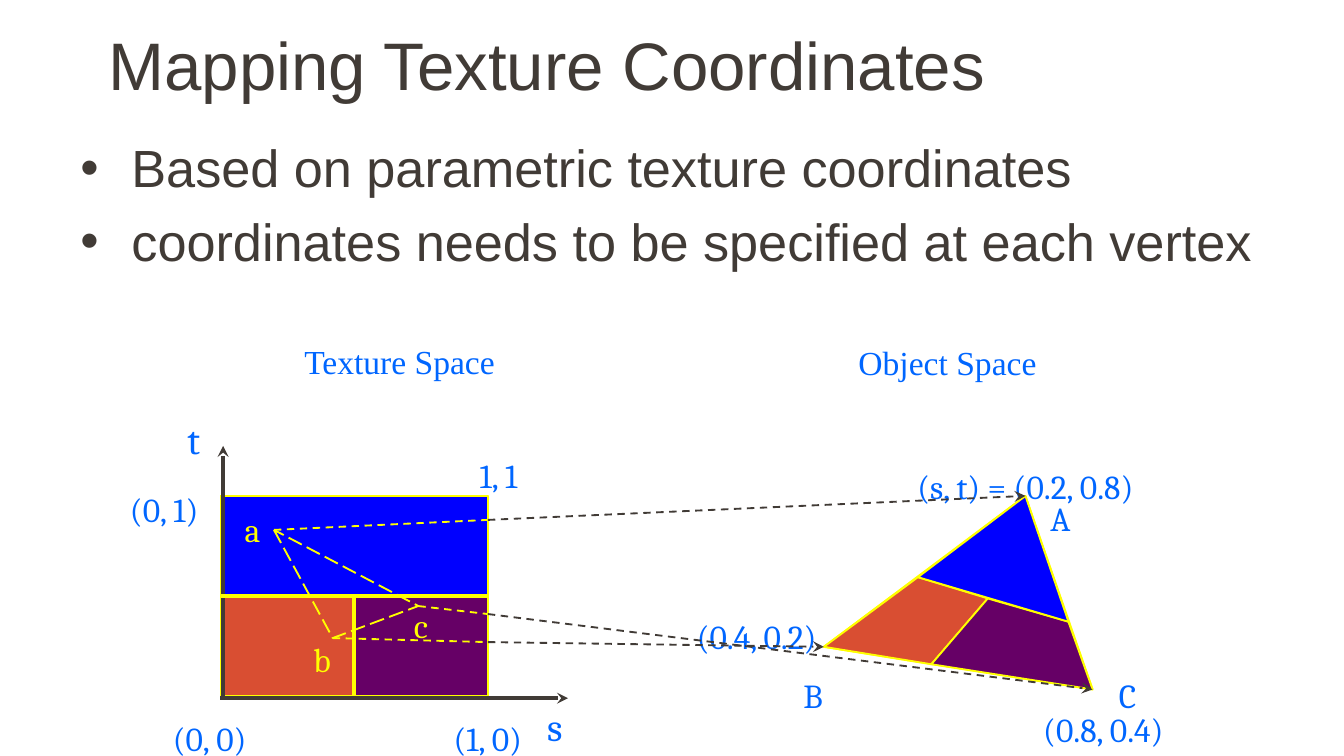
from dataclasses import dataclass

from lxml import etree
from pptx import Presentation
from pptx.dml.color import RGBColor
from pptx.enum.dml import MSO_LINE
from pptx.enum.shapes import MSO_CONNECTOR, MSO_SHAPE
from pptx.enum.text import MSO_ANCHOR, MSO_AUTO_SIZE, PP_ALIGN
from pptx.oxml.ns import qn
from pptx.util import Inches, Pt

STRAIGHT = MSO_CONNECTOR.STRAIGHT
RECT = MSO_SHAPE.RECTANGLE
DASH, LONG_DASH = MSO_LINE.DASH, MSO_LINE.LONG_DASH
CENTER, MIDDLE = PP_ALIGN.CENTER, MSO_ANCHOR.MIDDLE
GROW = MSO_AUTO_SIZE.SHAPE_TO_FIT_TEXT
TOP, LEFT, BOTTOM, RIGHT = range(4)
CELL = Inches(0.1)


@dataclass(frozen=True)
class Theme:
    """Colours, fonts and type sizes of the slide."""
    ink: str = "413B36"
    label: str = "0066FF"
    edge: str = "FFFF00"
    blue: str = "0000FF"
    orange: str = "D94E32"
    purple: str = "660066"
    sans: str = "Arial"
    math: str = "Cambria"
    serif: str = "Times New Roman"
    title: int = 36
    body: int = 28
    axis: int = 21
    small: int = 18


THEME = Theme()


@dataclass(frozen=True)
class Box:
    """A region measured in grid columns and rows."""
    x: float
    y: float
    w: float
    h: float

    def at(self, u, v):
        """Return the point at the given shares of the box."""
        return round((self.x + u * self.w) * CELL), round((self.y + v * self.h) * CELL)

    def frame(self):
        """Return left, top, width and height as lengths."""
        return [round(n * CELL) for n in (self.x, self.y, self.w, self.h)]


TEXTURE_POINTS = {"a": (0.2, 0.17), "b": (0.42, 0.71), "c": (0.74, 0.55)}
EXITS = {"a": (1, 0.12), "b": (1, 0.73), "c": (1, 0.59)}
VERTICES = {"a": (0.75, 0), "b": (0, 0.78), "c": (1, 1)}


def add_run(p, text, size, color, font):
    """Add a styled run to a paragraph."""
    r = p.add_run()
    r.text = text
    r.font.size, r.font.name = Pt(size), font
    r.font.color.rgb = RGBColor.from_string(color)


def add_label(s, box, u, v, text, w, size=THEME.small, color=THEME.label, font=THEME.math):
    """Centre a one-line label on a point of the box."""
    x, y = box.at(u, v)
    width, height = round(w * CELL), Pt(size * 1.2) + Inches(0.09)
    tf = s.shapes.add_textbox(x - width // 2, y - height // 2, width, height).text_frame
    tf.margin_left = tf.margin_right = Inches(0.09)
    tf.margin_top = tf.margin_bottom = Inches(0.04)
    tf.word_wrap, tf.auto_size = False, GROW
    p = tf.paragraphs[0]
    p.alignment = CENTER
    add_run(p, text, size, color, font)


def add_line(s, start, end, color, width=1, dash=None, arrow=None):
    """Draw a straight connector with an optional dash and arrowhead."""
    cxn = s.shapes.add_connector(STRAIGHT, *start, *end)
    cxn.line.color.rgb = RGBColor.from_string(color)
    cxn.line.width = Pt(width)
    if dash:
        cxn.line.dash_style = dash
    sp_pr = cxn._element.spPr
    if arrow:
        etree.SubElement(sp_pr.find(qn("a:ln")), qn(f"a:{arrow}"), type="stealth")
    etree.SubElement(sp_pr, qn("a:effectLst"))
    return cxn


def style_patch(sp, fill=None, dash=None):
    """Give a shape the yellow edge and an optional fill."""
    sp.shadow.inherit = False
    if fill:
        sp.fill.solid()
        sp.fill.fore_color.rgb = RGBColor.from_string(fill)
    else:
        sp.fill.background()
    sp.line.color.rgb = RGBColor.from_string(THEME.edge)
    sp.line.width = Pt(1)
    if dash:
        sp.line.dash_style = dash
    return sp


def add_rect(shapes, box, u, v, w, h, fill=None):
    """Draw a rectangle at shares of the box."""
    part = Box(box.x + u * box.w, box.y + v * box.h, w * box.w, h * box.h)
    return style_patch(shapes.add_shape(RECT, *part.frame()), fill)


def add_polygon(s, box, points, fill=None, dash=None):
    """Draw a closed polygon through shares of the box."""
    first, *rest = [box.at(*pt) for pt in points]
    builder = s.shapes.build_freeform(*first)
    builder.add_line_segments(rest, close=True)
    return style_patch(builder.convert_to_shape(), fill, dash)


def draw_title(s, box, text):
    """Place the slide title."""
    tf = s.shapes.add_textbox(*box.frame()).text_frame
    tf.word_wrap, tf.vertical_anchor = True, MIDDLE
    p = tf.paragraphs[0]
    p.alignment = CENTER
    add_run(p, text, THEME.title, THEME.ink, THEME.sans)


def draw_bullets(s, box, items):
    """Place the bulleted statements."""
    tf = s.shapes.add_textbox(*box.frame()).text_frame
    tf.word_wrap = True
    for i, text in enumerate(items):
        p = tf.add_paragraph() if i else tf.paragraphs[0]
        p_pr = p._p.get_or_add_pPr()
        p_pr.set("marL", str(Inches(0.38)))
        p_pr.set("indent", str(-Inches(0.38)))
        etree.SubElement(p_pr, qn("a:buFont"), typeface=THEME.sans)
        etree.SubElement(p_pr, qn("a:buChar"), char="•")
        if i:
            p.space_before = Pt(THEME.body * 0.2)
        add_run(p, text, THEME.body, THEME.ink, THEME.sans)


def draw_texture_space(s, box):
    """Draw the texture square with its axes and sample triangle."""
    group = s.shapes.add_group_shape()
    upper = add_rect(group.shapes, box, 0, 0, 1, 0.5, THEME.blue)
    add_rect(group.shapes, box, 0, 0.5, 0.5, 0.5, THEME.orange)
    add_rect(group.shapes, box, 0.5, 0.5, 0.5, 0.5, THEME.purple)
    outline = add_rect(s.shapes, box, 0, 0, 1, 1)
    add_line(s, box.at(0.01, -0.25), box.at(0.01, 1.01), THEME.ink, 2, arrow="headEnd")
    add_line(s, box.at(0, 1.01), box.at(1.3, 1.01), THEME.ink, 2, arrow="tailEnd")
    across = add_line(s, box.at(0, 0.5), box.at(1, 0.5), THEME.edge, 2)
    across.begin_connect(outline, LEFT)
    across.end_connect(outline, RIGHT)
    down = add_line(s, box.at(0.5, 0.5), box.at(0.5, 1), THEME.edge, 2)
    down.begin_connect(upper, BOTTOM)
    down.end_connect(outline, BOTTOM)
    add_polygon(s, box, TEXTURE_POINTS.values(), dash=LONG_DASH)
    add_label(s, box, 0.67, -0.67, "Texture Space", 16.2, font=THEME.serif)
    for text, u, v in (("s", 1.25, 1.15), ("t", -0.1, -0.28)):
        add_label(s, box, u, v, text, 3, THEME.axis)
    for text, u, v in (("1, 1", 1.04, -0.1), ("(0, 1)", -0.21, 0.07),
                       ("(0, 0)", -0.04, 1.21), ("(1, 0)", 1, 1.21)):
        add_label(s, box, u, v, text, 7.3)
    for text, u, v in (("a", 0.12, 0.17), ("b", 0.38, 0.82), ("c", 0.75, 0.65)):
        add_label(s, box, u, v, text, 3.1, color=THEME.edge)


def draw_object_space(s, box):
    """Draw the textured triangle with its vertex labels."""
    a, b, c = VERTICES.values()
    on_ab, on_ac, on_bc, inner = (0.35, 0.42), (0.91, 0.65), (0.4, 0.87), (0.61, 0.53)
    add_polygon(s, box, (a, b, c))
    for start, end in ((on_ab, on_ac), (inner, on_bc)):
        add_line(s, box.at(*start), box.at(*end), THEME.edge, 2)
    for text, u, v, w in (("(s, t) = (0.2, 0.8)", 0.75, -0.05, 18.7),
                          ("(0.4, 0.2)", -0.25, 0.73, 11.1),
                          ("(0.8, 0.4)", 1.04, 1.21, 11.1),
                          ("A", 0.88, 0.12, 3.8), ("B", -0.04, 1.03, 3.4),
                          ("C", 1.13, 1.03, 3.6)):
        add_label(s, box, u, v, text, w)
    add_label(s, box, 0.46, -0.69, "Object Space", 15.2, font=THEME.serif)
    add_polygon(s, box, (on_ab, inner, on_bc, b), THEME.orange)
    add_polygon(s, box, (inner, on_ac, c, on_bc), THEME.purple)
    add_polygon(s, box, (on_ab, a, on_ac), THEME.blue)


def draw_mapping(s, texture, target):
    """Link each texture point to its triangle vertex."""
    for name, point in TEXTURE_POINTS.items():
        leave = texture.at(*EXITS[name])
        add_line(s, texture.at(*point), leave, THEME.edge, dash=DASH)
        add_line(s, leave, target.at(*VERTICES[name]), THEME.ink, dash=DASH, arrow="tailEnd")


def main():
    """Build and save the slide."""
    prs = Presentation()
    prs.slide_width, prs.slide_height = Inches(10), Inches(10) * 9 // 16
    s = prs.slides.add_slide(prs.slide_layouts[6])
    texture, target = Box(16.4, 36.9, 19.9, 14.9), Box(61.3, 36.9, 20, 14.4)
    draw_title(s, Box(6.4, 0, 68.6, 9.4), "Mapping Texture Coordinates")
    draw_bullets(s, Box(5, 9.6, 90, 37.1), ("Based on parametric texture coordinates",
                                            "coordinates needs to be specified at each vertex"))
    draw_texture_space(s, texture)
    draw_object_space(s, target)
    draw_mapping(s, texture, target)
    prs.save("out.pptx")


if __name__ == "__main__":
    main()
